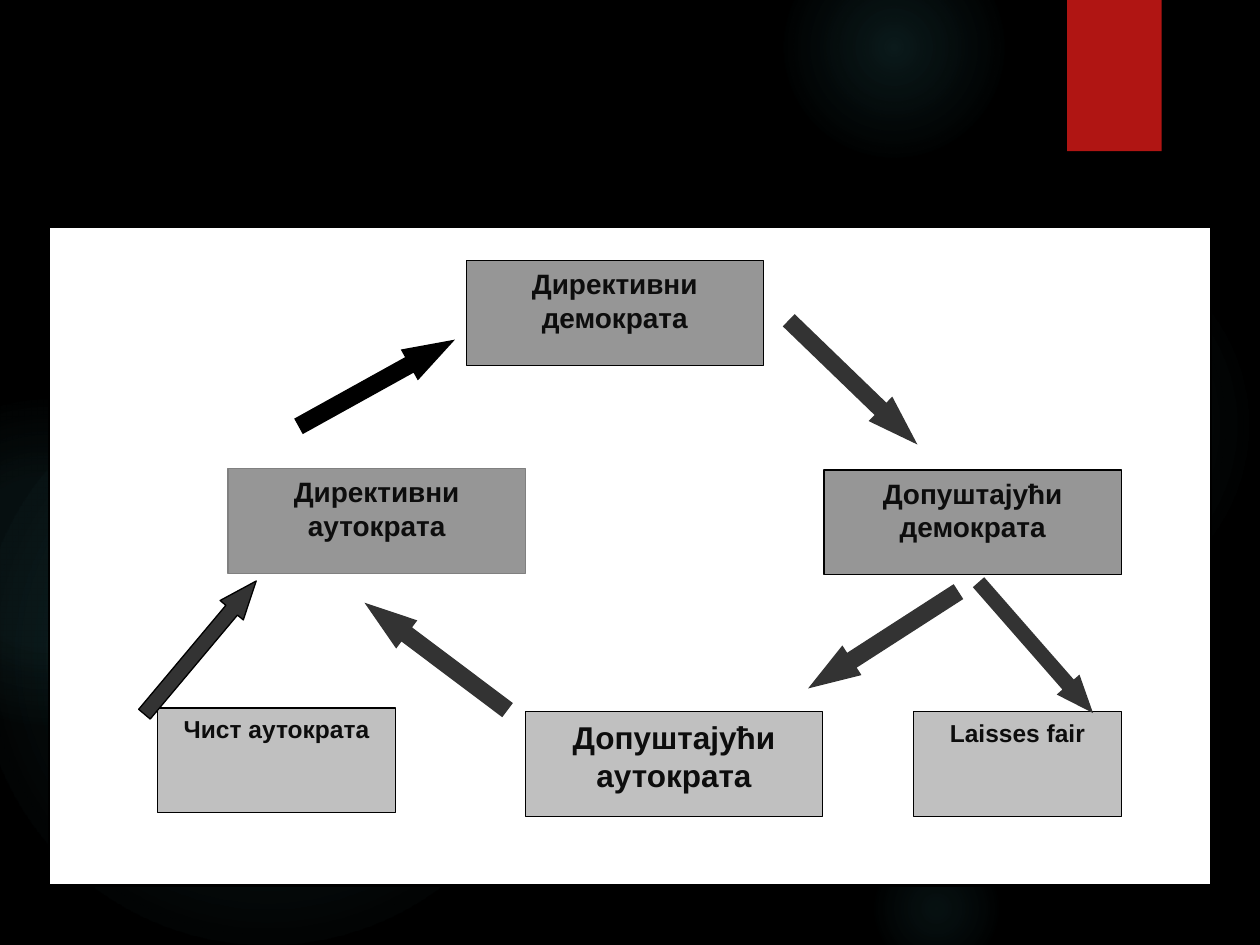
from lxml import etree
from pptx import Presentation
from pptx.dml.color import RGBColor
from pptx.enum import shapes, text
from pptx.oxml import ns
from pptx.util import Inches, Pt

COLORS = {
    "background": "000000", "glow": "50B9C1", "ribbon": "B01513",
    "panel": "FFFFFF", "black": "000000", "text": "0D0D0D",
    "dark_box": "969696", "light_box": "C0C0C0", "soft_line": "808080",
    "arrow": "333333",
}
SHAPE = shapes.MSO_SHAPE

# left, top, diameter, then (position %, opacity %) stops
GLOWS = [
    (6.89, 1.83, 3.08, [(0, 7), (36, 6), (69, 0)]),
    (6.22, -0.5, 1.75, [(0, 14), (36, 7), (73, 0)]),
    (6.89, 6.67, 1.08, [(0, 9), (36, 5), (66, 0)]),
    (-0.17, 2.92, 4.58, [(0, 11), (36, 10), (75, 0)]),
    (-0.92, 3.17, 2.58, [(0, 8), (36, 8), (72, 0)]),
]
# Offsets from the panel corner: left, top, width, paragraphs, size, fill, line
STYLES = [
    (3.31, 0.27, 2.36, ["Директивни демократа"], 16, "dark_box", "black"),
    (1.42, 1.92, 2.36, ["Директивни аутократа"], 16, "dark_box", "soft_line"),
    (3.78, 3.85, 2.36, ["Допуштајући", "аутократа"], 18, "light_box", "black"),
    (6.15, 1.93, 2.36, ["Допуштајући демократа"], 16, "dark_box", "black"),
    (0.86, 3.82, 1.89, ["Чист аутократа"], 14, "light_box", "black"),
    (6.86, 3.85, 1.65, ["Laisses fair"], 14, "light_box", "black"),
]
# Offsets from the panel corner: left, top, width, height, kind, rotation,
# head length, fill, line
ARROWS = [
    (1.89, 1.1, 1.42, 0.28, SHAPE.RIGHT_ARROW, 331, 1.48, "black", None),
    (5.67, 1.1, 1.42, 0.27, SHAPE.RIGHT_ARROW, 44, 1.51, "arrow", None),
    (5.91, 3.14, 1.42, 0.28, SHAPE.LEFT_ARROW, 327.2, 1.48, "arrow", None),
    (2.36, 3.27, 1.42, 0.28, SHAPE.LEFT_ARROW, 36.9, 1.5, "arrow", None),
    (0.51, 3.22, 1.38, 0.24, SHAPE.RIGHT_ARROW, 310, 1.26, "arrow", "black"),
    (7.14, 3.22, 1.38, 0.24, SHAPE.RIGHT_ARROW, 48.8, 1.25, "arrow", None),
]


def color(name):
    return RGBColor.from_string(COLORS[name])


def add_shape(slide, kind, box, fill, line=None, line_width=0.75):
    shape = slide.shapes.add_shape(kind, *map(Inches, box))
    shape.shadow.inherit = False
    shape.fill.solid()
    shape.fill.fore_color.rgb = color(fill)
    if line:
        shape.line.color.rgb = color(line)
        shape.line.width = Pt(line_width)
    else:
        shape.line.fill.background()
    return shape


def add_glow(slide, box, stops):
    shape = add_shape(slide, SHAPE.OVAL, box, "glow")
    # Radial gradient with transparency
    properties = shape.fill._xPr
    solid = properties.find(ns.qn("a:solidFill"))
    gradient = etree.Element(ns.qn("a:gradFill"), rotWithShape="1")
    stop_list = etree.SubElement(gradient, ns.qn("a:gsLst"))
    for position, opacity in stops:
        stop = etree.SubElement(stop_list, ns.qn("a:gs"), pos=str(position * 1000))
        tint = etree.SubElement(stop, ns.qn("a:srgbClr"), val=COLORS["glow"])
        etree.SubElement(tint, ns.qn("a:alpha"), val=str(opacity * 1000))
    radial = etree.SubElement(gradient, ns.qn("a:path"), path="circle")
    etree.SubElement(radial, ns.qn("a:fillToRect"),
                     l="50000", t="50000", r="50000", b="50000")
    properties.replace(solid, gradient)


def add_backdrop(slide):
    slide.background.fill.solid()
    slide.background.fill.fore_color.rgb = color("background")
    for left, top, diameter, stops in GLOWS:
        add_glow(slide, (left, top, diameter, diameter), stops)
    add_shape(slide, SHAPE.RECTANGLE, (8.47, 0, 0.75, 1.2), "ribbon")


def add_style_box(slide, box, lines, size, fill, line):
    shape = add_shape(slide, SHAPE.RECTANGLE, box, fill, line)
    frame = shape.text_frame
    frame.word_wrap = True
    frame.vertical_anchor = text.MSO_ANCHOR.TOP
    for index, line_text in enumerate(lines):
        paragraph = frame.add_paragraph() if index else frame.paragraphs[0]
        paragraph.text = line_text
        paragraph.alignment = text.PP_ALIGN.CENTER
        paragraph.font.name = "Arial"
        paragraph.font.size = Pt(size)
        paragraph.font.bold = True
        paragraph.font.color.rgb = color("text")


def add_diagram(slide, box):
    panel_left, panel_top = box[:2]
    add_shape(slide, SHAPE.RECTANGLE, box, "panel", "black", 1.5)
    # Leadership styles
    for left, top, width, *details in STYLES:
        add_style_box(slide, (panel_left + left, panel_top + top, width, 0.83),
                      *details)
    # Transitions between styles
    for left, top, width, height, kind, rotation, head, fill, line in ARROWS:
        arrow = add_shape(slide, kind, (panel_left + left, panel_top + top,
                                        width, height), fill, line)
        arrow.rotation = rotation
        arrow.adjustments[0] = 0.5
        arrow.adjustments[1] = head


def main():
    presentation = Presentation()
    presentation.slide_width = Inches(10)
    presentation.slide_height = Inches(7.5)
    slide = presentation.slides.add_slide(presentation.slide_layouts[6])
    add_backdrop(slide)
    add_diagram(slide, (0.39, 1.8, 9.22, 5.23))
    presentation.save("out.pptx")


if __name__ == "__main__":
    main()
